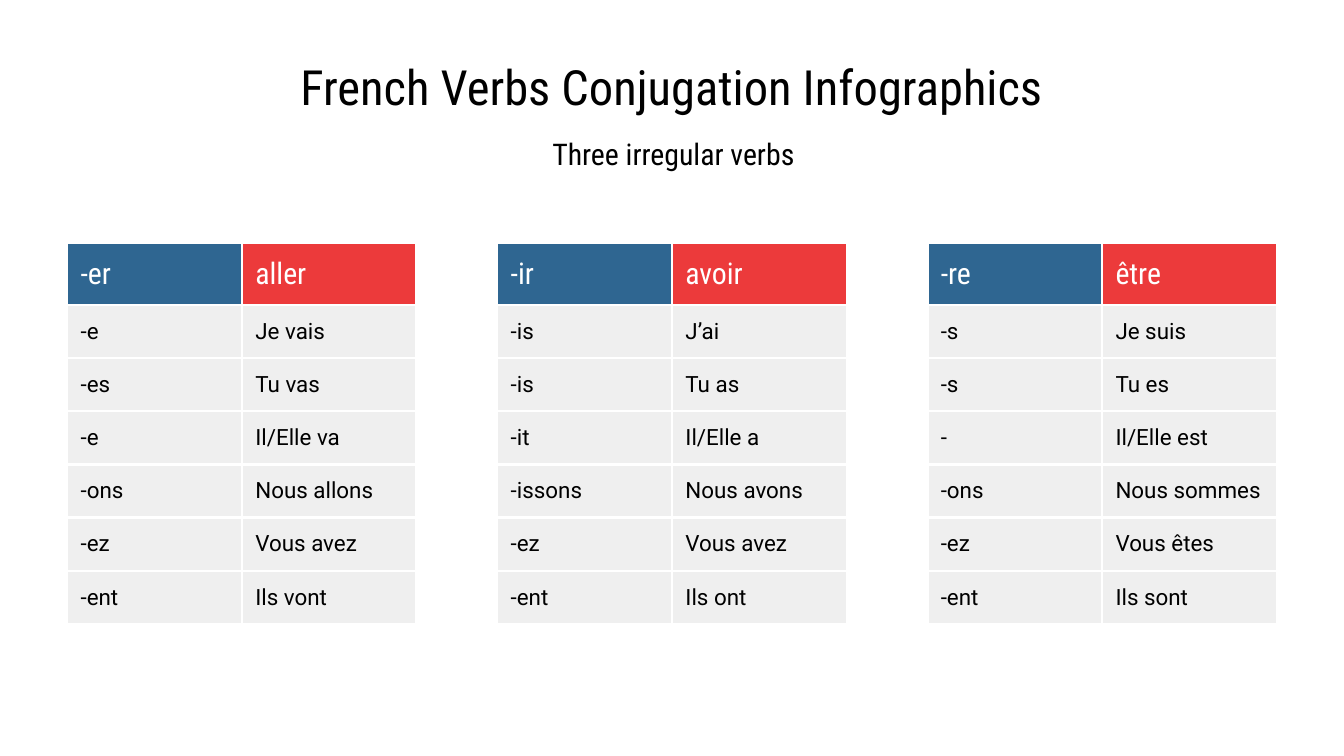
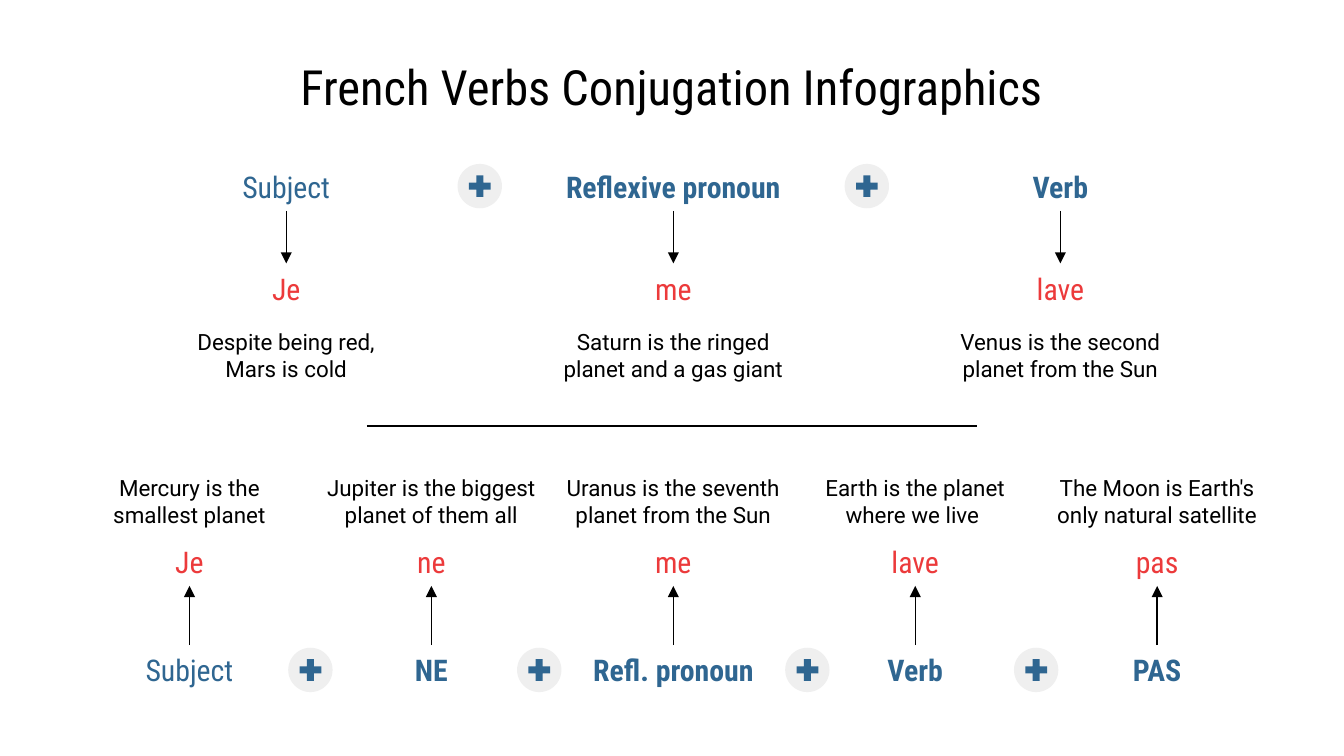
from dataclasses import dataclass

from lxml import etree
from pptx import Presentation
from pptx.dml.color import RGBColor
from pptx.enum.shapes import MSO_CONNECTOR, MSO_SHAPE
from pptx.enum.text import MSO_ANCHOR, MSO_AUTO_SIZE, PP_ALIGN
from pptx.oxml.ns import qn
from pptx.util import Inches, Pt

STRAIGHT = MSO_CONNECTOR.STRAIGHT
OVAL, PLUS = MSO_SHAPE.OVAL, MSO_SHAPE.MATH_PLUS
TOP, MIDDLE, BOTTOM = MSO_ANCHOR.TOP, MSO_ANCHOR.MIDDLE, MSO_ANCHOR.BOTTOM
LEFT, CENTER = PP_ALIGN.LEFT, PP_ALIGN.CENTER
NO_AUTOFIT = MSO_AUTO_SIZE.NONE

TITLE = "French Verbs Conjugation Infographics"
SUBTITLE = "Three irregular verbs"

CONJUGATIONS = [
    [("-er", "aller"), ("-e", "Je vais"), ("-es", "Tu vas"), ("-e", "Il/Elle va"),
     ("-ons", "Nous allons"), ("-ez", "Vous avez"), ("-ent", "Ils vont")],
    [("-ir", "avoir"), ("-is", "J’ai"), ("-is", "Tu as"), ("-it", "Il/Elle a"),
     ("-issons", "Nous avons"), ("-ez", "Vous avez"), ("-ent", "Ils ont")],
    [("-re", "être"), ("-s", "Je suis"), ("-s", "Tu es"), ("-", "Il/Elle est"),
     ("-ons", "Nous sommes"), ("-ez", "Vous êtes"), ("-ent", "Ils sont")],
]

AFFIRMATIVE = {
    "parts": [
        ("Subject", 2.1, "Je", "Despite being red, Mars is cold"),
        ("Reflexive pronoun", 2.1, "me", "Saturn is the ringed planet and a gas giant"),
        ("Verb", 2.1, "lave", "Venus is the second planet from the Sun"),
    ],
    "first_center": 2.13, "pitch": 2.88, "example_width": 1.91,
    "role_top": 1.2, "example_top": 1.96, "caption_top": 2.34, "arrow": (1.57, 1.96),
}
NEGATIVE = {
    "parts": [
        ("Subject", 1.23, "Je", "Mercury is the smallest planet"),
        ("NE", 1.23, "ne", "Jupiter is the biggest planet of them all"),
        ("Refl. pronoun", 1.62, "me", "Uranus is the seventh planet from the Sun"),
        ("Verb", 1.23, "lave", "Earth is the planet where we live "),
        ("PAS", 1.23, "pas", "The Moon is Earth's only natural satellite"),
    ],
    "first_center": 1.41, "pitch": 1.8, "example_width": 1.8,
    "role_top": 4.8, "example_top": 3.99, "caption_top": 3.43, "arrow": (4.8, 4.36),
}

LABEL_HEIGHT, CAPTION_HEIGHT = 0.37, 0.57
DISC_SIZE, PLUS_SIZE = 0.33, 0.22


@dataclass(frozen=True)
class Theme:
    black: str = "000000"
    white: str = "FFFFFF"
    blue: str = "2F6691"
    red: str = "EC3A3B"
    gray: str = "EFEFEF"
    heading_font: str = "Roboto Condensed"
    body_font: str = "Roboto"
    title_size: int = 26
    heading_size: int = 16
    body_size: int = 12
    line_width: float = 0.75
    grid_width: float = 1.5


THEME = Theme()
TITLE_STYLE = (THEME.heading_font, THEME.title_size)
HEADING_STYLE = (THEME.heading_font, THEME.heading_size)
BODY_STYLE = (THEME.body_font, THEME.body_size)


def rgb(color):
    return RGBColor.from_string(color)


def write(frame, text, style, color, align=CENTER, bold=False):
    frame.text = text
    paragraph = frame.paragraphs[0]
    paragraph.alignment = align
    font = paragraph.runs[0].font
    font.name, font.size = style[0], Pt(style[1])
    font.bold = bold
    font.color.rgb = rgb(color)


def set_frame(frame, anchor):
    frame.word_wrap = True
    frame.auto_size = NO_AUTOFIT
    frame.vertical_anchor = anchor
    frame.margin_left = frame.margin_right = Inches(0.1)
    frame.margin_top = frame.margin_bottom = Inches(0.1)


def add_titled_slide(deck):
    slide = deck.slides.add_slide(deck.slide_layouts[5])
    title = slide.shapes.title
    title.left, title.top = Inches(0.5), Inches(0.45)
    title.width, title.height = Inches(9), Inches(0.51)
    set_frame(title.text_frame, BOTTOM)
    write(title.text_frame, TITLE, TITLE_STYLE, THEME.black)
    return slide


def add_text(slide, box, text, style, color, anchor=MIDDLE, bold=False):
    label = slide.shapes.add_textbox(*map(Inches, box))
    set_frame(label.text_frame, anchor)
    write(label.text_frame, text, style, color, bold=bold)


def add_line(slide, start, end, arrow=False):
    line = slide.shapes.add_connector(STRAIGHT, *map(Inches, (*start, *end)))
    line.line.color.rgb = rgb(THEME.black)
    line.line.width = Pt(THEME.line_width)
    properties = line.element.spPr
    if arrow:
        etree.SubElement(properties.find(qn("a:ln")), qn("a:tailEnd"), type="triangle")
    etree.SubElement(properties, qn("a:effectLst"))


def add_mark(slide, kind, center, middle, size, color):
    mark = slide.shapes.add_shape(
        kind, Inches(center - size / 2), Inches(middle - size / 2), Inches(size), Inches(size))
    mark.shadow.inherit = False
    mark.fill.solid()
    mark.fill.fore_color.rgb = rgb(color)
    mark.line.fill.background()
    return mark


def add_plus(slide, center, middle):
    add_mark(slide, OVAL, center, middle, DISC_SIZE, THEME.gray)
    add_mark(slide, PLUS, center, middle, PLUS_SIZE, THEME.blue).adjustments[0] = 0.235


def set_borders(cell, widths):
    properties = cell._tc.get_or_add_tcPr()
    for index, (side, width) in enumerate(widths.items()):
        border = etree.Element(qn(f"a:ln{side}"), w=str(Pt(width)))
        fill = etree.SubElement(border, qn("a:solidFill"))
        etree.SubElement(fill, qn("a:srgbClr"), val=THEME.white)
        properties.insert(index, border)


def add_conjugation(slide, left, rows):
    frame = slide.shapes.add_table(
        len(rows), 2, Inches(left), Inches(1.81), Inches(3.28), Inches(3.28))
    table = frame.table
    table.first_row = table.horz_banding = False
    for column in table.columns:
        column.width = Inches(1.3)
    last = len(rows) - 1
    for r, words in enumerate(rows):
        header = r == 0
        table.rows[r].height = Inches(0.35 if header else 0.3)
        fills = (THEME.blue, THEME.red) if header else (THEME.gray, THEME.gray)
        for c, (word, fill) in enumerate(zip(words, fills)):
            cell = table.cell(r, c)
            cell.margin_left = cell.margin_right = Inches(0.1)
            cell.margin_top = cell.margin_bottom = Inches(0.1)
            cell.vertical_anchor = MIDDLE
            cell.fill.solid()
            cell.fill.fore_color.rgb = rgb(fill)
            write(cell.text_frame, word, HEADING_STYLE if header else BODY_STYLE,
                  THEME.white if header else THEME.black, LEFT)
            set_borders(cell, {
                "L": THEME.grid_width, "R": THEME.grid_width,
                "T": THEME.line_width if header else THEME.grid_width,
                "B": THEME.line_width if r == last else THEME.grid_width})
    frame.width = frame.height = Inches(3.28)


def add_formula(slide, formula):
    previous_right = None
    width = formula["example_width"]
    role_top = formula["role_top"]
    arrow_start, arrow_end = formula["arrow"]
    for i, (role, role_width, example, caption) in enumerate(formula["parts"]):
        center = formula["first_center"] + i * formula["pitch"]
        left, role_left = center - width / 2, center - role_width / 2
        add_text(slide, (left, formula["caption_top"], width, CAPTION_HEIGHT),
                 caption, BODY_STYLE, THEME.black, TOP)
        add_text(slide, (left, formula["example_top"], width, LABEL_HEIGHT),
                 example, HEADING_STYLE, THEME.red)
        add_text(slide, (role_left, role_top, role_width, LABEL_HEIGHT),
                 role, HEADING_STYLE, THEME.blue, bold=i > 0)
        add_line(slide, (center, arrow_start), (center, arrow_end), arrow=True)
        if previous_right is not None:
            add_plus(slide, (previous_right + role_left) / 2, role_top + LABEL_HEIGHT / 2)
        previous_right = role_left + role_width


def main():
    deck = Presentation()
    deck.slide_width = Inches(10)
    deck.slide_height = deck.slide_width * 9 // 16

    irregular = add_titled_slide(deck)
    for i, rows in enumerate(CONJUGATIONS):
        add_conjugation(irregular, 0.5 + i * 3.2, rows)
    add_text(irregular, (2.27, 0.96, 5.48, LABEL_HEIGHT), SUBTITLE, HEADING_STYLE, THEME.black)

    reflexive = add_titled_slide(deck)
    for formula in (AFFIRMATIVE, NEGATIVE):
        add_formula(reflexive, formula)
    add_line(reflexive, (2.73, 3.17), (7.27, 3.17))

    deck.save("out.pptx")


if __name__ == "__main__":
    main()
